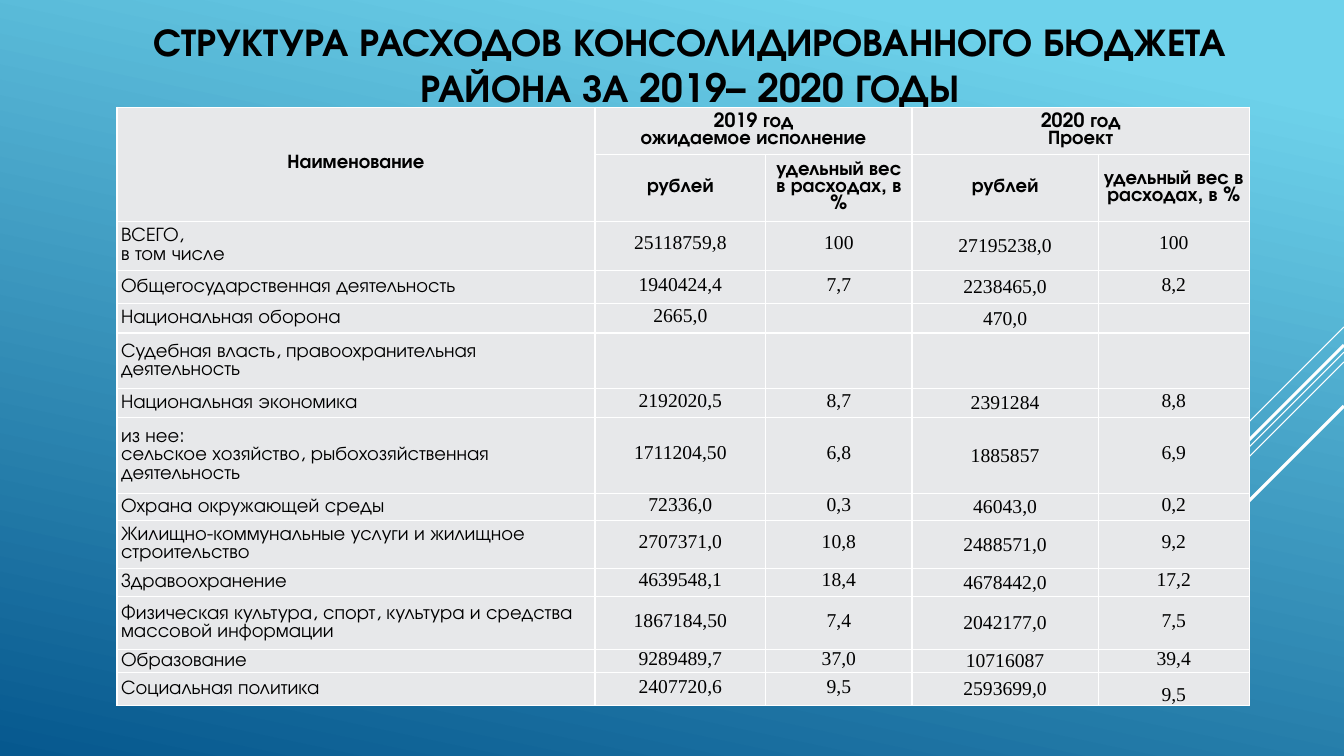
from lxml import etree
from pptx import Presentation
from pptx.dml.color import RGBColor
from pptx.enum.shapes import MSO_CONNECTOR
from pptx.enum.text import MSO_ANCHOR, MSO_AUTO_SIZE, PP_ALIGN
from pptx.oxml.ns import qn
from pptx.util import Pt

STRAIGHT = MSO_CONNECTOR.STRAIGHT
LEFT, CENTER = PP_ALIGN.LEFT, PP_ALIGN.CENTER
TOP, MIDDLE, BOTTOM = MSO_ANCHOR.TOP, MSO_ANCHOR.MIDDLE, MSO_ANCHOR.BOTTOM
NO_AUTOFIT = MSO_AUTO_SIZE.NONE
TITLE_ONLY = 5

COLORS = {"sky": "6ED2EB", "deep": "06588E", "white": "FFFFFF",
          "cell": "E7E8EA", "text": "000000"}
HEAD_FONT, NUMBER_FONT = "TeX Gyre Adventor", "Times New Roman"
WIDTH, HEIGHT = 960, 540

# Text formats: font attributes and paragraph attributes
FORMATS = {
    "title": ({"name": HEAD_FONT, "size": Pt(27.9), "bold": True},
              {"alignment": CENTER, "line_spacing": Pt(33)}),
    "header": ({"name": HEAD_FONT, "size": Pt(14), "bold": True},
               {"alignment": CENTER, "line_spacing": Pt(12)}),
    "label": ({"name": HEAD_FONT, "size": Pt(14), "bold": False},
              {"alignment": LEFT, "line_spacing": Pt(13)}),
    "tight": ({"name": NUMBER_FONT, "size": Pt(14), "bold": False},
              {"alignment": CENTER, "line_spacing": Pt(12)}),
    "loose": ({"name": NUMBER_FONT, "size": Pt(14), "bold": False},
              {"alignment": CENTER, "line_spacing": 1.0}),
}
COLUMN_FORMATS = ["label", "tight", "tight", "loose", "tight"]
COLUMN_WIDTHS = [341.5, 122, 104.5, 133, 108]
ROW_HEIGHTS = [34, 47.5, 35, 24, 21, 39.5, 21, 54, 19.5, 34, 20.5, 37.5, 16.5, 23.5]

TITLE = "СТРУКТУРА РАСХОДОВ КОНСОЛИДИРОВАННОГО БЮДЖЕТА РАЙОНА ЗА 2019– 2020 ГОДЫ"
SHARE = "удельный вес в расходах, в %"
HEADERS = [
    ["Наименование", "2019 год\nожидаемое исполнение", "", "2020 год\nПроект", ""],
    ["", "рублей", SHARE, "рублей", SHARE],
]
EXPENSES = [
    ["ВСЕГО,\nв том числе", "25118759,8", "100", "27195238,0", "100"],
    ["Общегосударственная деятельность", "1940424,4", "7,7", "2238465,0", "8,2"],
    ["Национальная оборона", "2665,0", "", "470,0", ""],
    ["Судебная власть, правоохранительная деятельность", "", "", "", ""],
    ["Национальная экономика", "2192020,5", "8,7", "2391284", "8,8"],
    ["из нее:\nсельское хозяйство, рыбохозяйственная деятельность",
     "1711204,50", "6,8", "1885857", "6,9"],
    ["Охрана окружающей среды", "72336,0", "0,3", "46043,0", "0,2"],
    ["Жилищно-коммунальные услуги и жилищное строительство",
     "2707371,0", "10,8", "2488571,0", "9,2"],
    ["Здравоохранение", "4639548,1", "18,4", "4678442,0", "17,2"],
    ["Физическая культура, спорт, культура и средства массовой информации",
     "1867184,50", "7,4", "2042177,0", "7,5"],
    ["Образование", "9289489,7", "37,0", "10716087", "39,4"],
    ["Социальная политика", "2407720,6", "9,5", "2593699,0", "9,5"],
]
MERGES = [((0, 0), (1, 0)), ((0, 1), (0, 2)), ((0, 3), (0, 4))]

# Diagonal rays: start height on the right edge, run to the left, weight
RAYS = [(233.5, 72, 0.75), (251.5, 234.5, 0.75), (258.5, 149, 0.75),
        (246.5, 137.5, 2.25), (290, 100, 2.25)]


def set_all(target, values):
    for name, value in values.items():
        setattr(target, name, value)


class SlideBuilder:
    def __init__(self, presentation, colors):
        self.colors = {name: RGBColor.from_string(code) for name, code in colors.items()}
        self.slide = presentation.slides.add_slide(presentation.slide_layouts[TITLE_ONLY])

    def background(self, stops, angle):
        fill = self.slide.background.fill
        fill.gradient()
        fill.gradient_angle = angle
        for stop, (position, color) in zip(fill.gradient_stops, stops):
            stop.position = position
            stop.color.rgb = self.colors[color]

    def ray(self, start, run, weight):
        line = self.slide.shapes.add_connector(
            STRAIGHT, Pt(WIDTH), Pt(start), Pt(WIDTH - run), Pt(start + run))
        line.line.color.rgb = self.colors["white"]
        line.line.width = Pt(weight)
        etree.SubElement(line._element.spPr, qn("a:effectLst"))

    def fill_text(self, frame, text, style):
        font_values, paragraph_values = FORMATS[style]
        frame.text = text
        for paragraph in frame.paragraphs:
            set_all(paragraph, paragraph_values)
            for run in paragraph.runs:
                set_all(run.font, font_values)
                run.font.color.rgb = self.colors["text"]
            if not paragraph.runs:
                # An empty cell keeps the small text size, so its row stays low
                end = etree.SubElement(paragraph._p, qn("a:endParaRPr"))
                end.set("sz", str(int(font_values["size"].pt * 100)))

    def title(self, text, left, top, width, height):
        title = self.slide.shapes.title
        set_all(title, {"left": Pt(left), "top": Pt(top),
                        "width": Pt(width), "height": Pt(height)})
        set_all(title.text_frame, {"word_wrap": True, "auto_size": NO_AUTOFIT,
                                   "vertical_anchor": TOP, "margin_top": 0})
        self.fill_text(title.text_frame, text, "title")

    def cell(self, cell, text, style):
        set_all(cell, {"margin_left": Pt(3), "margin_right": Pt(3), "margin_top": 0,
                       "margin_bottom": 0, "vertical_anchor": MIDDLE})
        self.fill_text(cell.text_frame, text, style)
        properties = cell._tc.get_or_add_tcPr()
        for side in ("lnL", "lnR", "lnT", "lnB"):
            border = etree.SubElement(properties, qn(f"a:{side}"), w=str(Pt(1)))
            solid = etree.SubElement(border, qn("a:solidFill"))
            etree.SubElement(solid, qn("a:srgbClr"), val=str(self.colors["white"]))
        cell.fill.solid()
        cell.fill.fore_color.rgb = self.colors["cell"]

    def table(self, rows, left, top):
        table = self.slide.shapes.add_table(
            len(rows), len(COLUMN_WIDTHS), Pt(left), Pt(top),
            Pt(sum(COLUMN_WIDTHS)), Pt(sum(ROW_HEIGHTS))).table
        set_all(table, {"first_row": False, "horz_banding": False})
        for column, width in zip(table.columns, COLUMN_WIDTHS):
            column.width = Pt(width)
        for row, height in zip(table.rows, ROW_HEIGHTS):
            row.height = Pt(height)
        for i, texts in enumerate(rows):
            for j, text in enumerate(texts):
                style = "header" if i < len(HEADERS) else COLUMN_FORMATS[j]
                self.cell(table.cell(i, j), text, style)
        for first, last in MERGES:
            table.cell(*first).merge(table.cell(*last))
        return table


def main():
    presentation = Presentation()
    set_all(presentation, {"slide_width": Pt(WIDTH), "slide_height": Pt(HEIGHT)})
    builder = SlideBuilder(presentation, COLORS)

    # Backdrop
    builder.background([(0.1, "sky"), (1.0, "deep")], 258)
    for ray in RAYS:
        builder.ray(*ray)

    # Title and budget table
    builder.title(TITLE, 69, 13, 847.5, 97)
    table = builder.table(HEADERS + EXPENSES, 83.5, 76.5)
    table.cell(len(ROW_HEIGHTS) - 1, 4).vertical_anchor = BOTTOM

    presentation.save("out.pptx")


if __name__ == "__main__":
    main()
